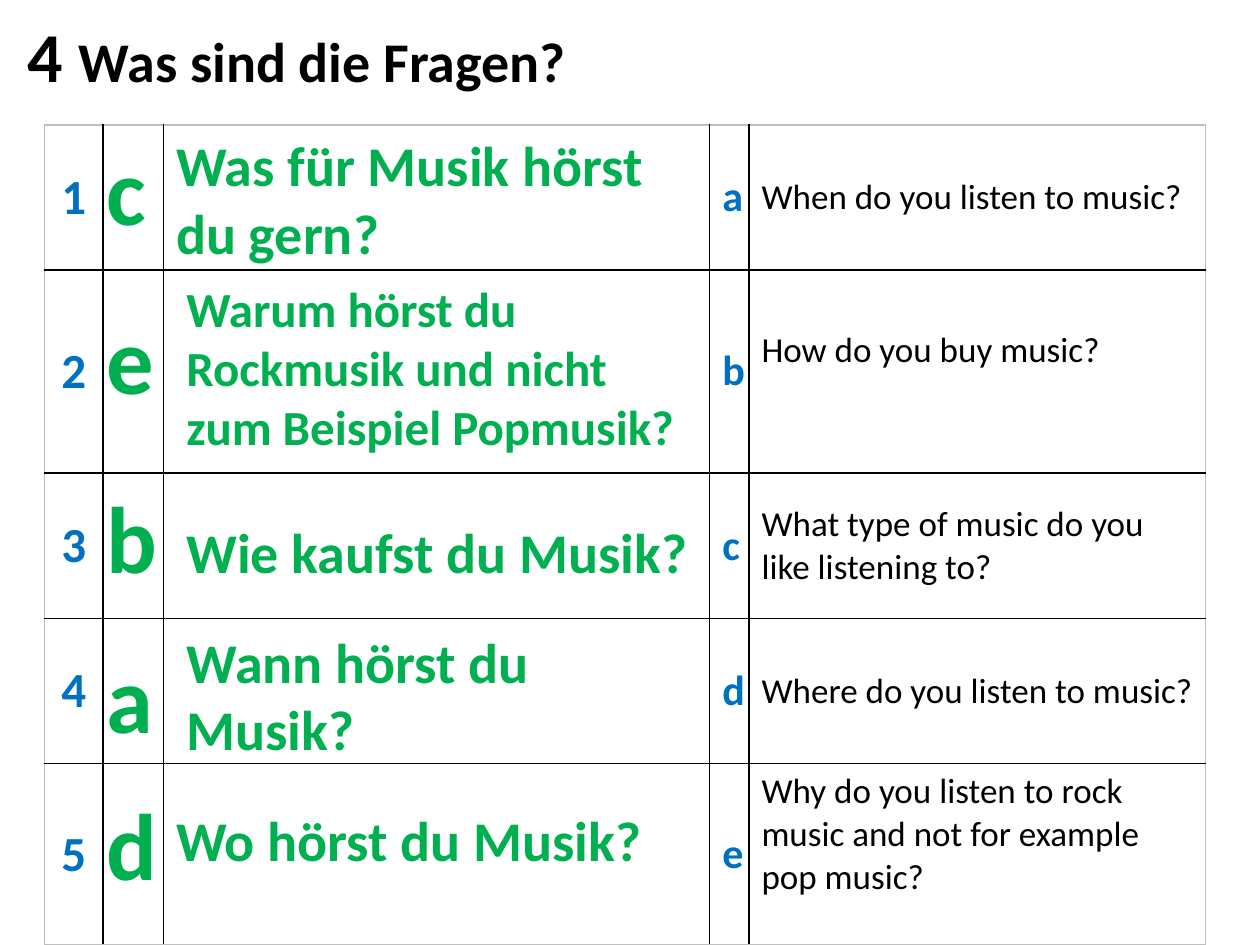
from lxml import etree
from pptx import Presentation
from pptx.dml.color import RGBColor
from pptx.enum import text
from pptx.oxml import ns
from pptx.util import Pt

BLACK = RGBColor(0x00, 0x00, 0x00)
GREY = RGBColor(0xBF, 0xBF, 0xBF)
BLUE = RGBColor(0x00, 0x70, 0xC0)
GREEN = RGBColor(0x00, 0xB0, 0x50)


def style(span, size, colour, bold=True):
    span.font.name = "Calibri"
    span.font.size = Pt(size)
    span.font.color.rgb = colour
    span.font.bold = bold


def add_text(left, top, width, height, *spans):
    box = page.shapes.add_textbox(Pt(left), Pt(top), Pt(width), Pt(height))
    box.text_frame.word_wrap = True
    box.text_frame.auto_size = text.MSO_AUTO_SIZE.SHAPE_TO_FIT_TEXT
    for words, size, colour in spans:
        span = box.text_frame.paragraphs[0].add_run()
        span.text = words
        style(span, size, colour)


deck = Presentation()
deck.slide_width, deck.slide_height = Pt(720), Pt(540)
page = deck.slides.add_slide(deck.slide_layouts[6])

# Title
add_text(8.6, 3.6, 675, 55.7, ("4 ", 40, BLACK), ("Was sind die Fragen?", 32, BLACK))

# Question table: number, answer letter, German, letter, English
questions = [
    "When do you listen to music?",
    "How do you buy music?",
    "What type of music do you like listening to?",
    "Where do you listen to music?",
    "Why do you listen to rock music and not for example pop music?",
]
raised = (1, 4)  # rows whose English text sits above the middle
widths = [33.4, 34.8, 312, 22.4, 260.8]
heights = [83, 116, 83, 83, 103]
frame = page.shapes.add_table(5, 5, Pt(25.4), Pt(71.4), Pt(sum(widths)), Pt(sum(heights)))
table = frame.table
for column, width in zip(table.columns, widths):
    column.width = Pt(width)
for row, height in zip(table.rows, heights):
    row.height = Pt(height)

for r, question in enumerate(questions):
    contents = {
        0: (str(r + 1), 28, BLUE, True),
        3: ("abcde"[r], 24, BLUE, True),
        4: (question, 20, BLACK, False),
    }
    for c in range(5):
        cell = table.cell(r, c)
        # Grey outer edges, black inner lines
        edges = {"lnL": c == 0, "lnR": c == 4, "lnT": r == 0, "lnB": r == 4}
        properties = cell._tc.get_or_add_tcPr()
        for tag, outer in edges.items():
            line = etree.SubElement(properties, ns.qn("a:" + tag), w=str(Pt(1)))
            fill = etree.SubElement(line, ns.qn("a:solidFill"))
            etree.SubElement(fill, ns.qn("a:srgbClr"), val=str(GREY if outer else BLACK))
        cell.fill.background()
        if c in contents:
            words, size, colour, bold = contents[c]
            cell.vertical_anchor = text.MSO_ANCHOR.MIDDLE
            cell.text_frame.text = words
            para = cell.text_frame.paragraphs[0]
            para.alignment = text.PP_ALIGN.LEFT if c == 4 else text.PP_ALIGN.CENTER
            style(para.runs[0], size, colour, bold)
        if c == 4 and r in raised:
            cell.margin_bottom = Pt(28)

# Answers: letter and its top, then German question with left, top, height, size
answers = [
    ("c", 71.3, "Was für Musik hörst du gern?", 93.6, 71.3, 85, 32),
    ("e", 167.8, "Warum hörst du Rockmusik und nicht zum Beispiel Popmusik?", 99.4, 155.5, 108.7, 28),
    ("b", 270, "Wie kaufst du Musik?", 99.4, 292.3, 46, 32),
    ("a", 361.4, "Wann hörst du Musik?", 99.4, 355, 85, 32),
    ("d", 445.7, "Wo hörst du Musik?", 93.6, 456.5, 46, 32),
]
for letter, letter_top, german, left, top, height, size in answers:
    add_text(54, letter_top, 45.4, 72.7, (letter, 54, GREEN))
    add_text(left, top, 306, height, (german, size, GREEN))

deck.save("out.pptx")
